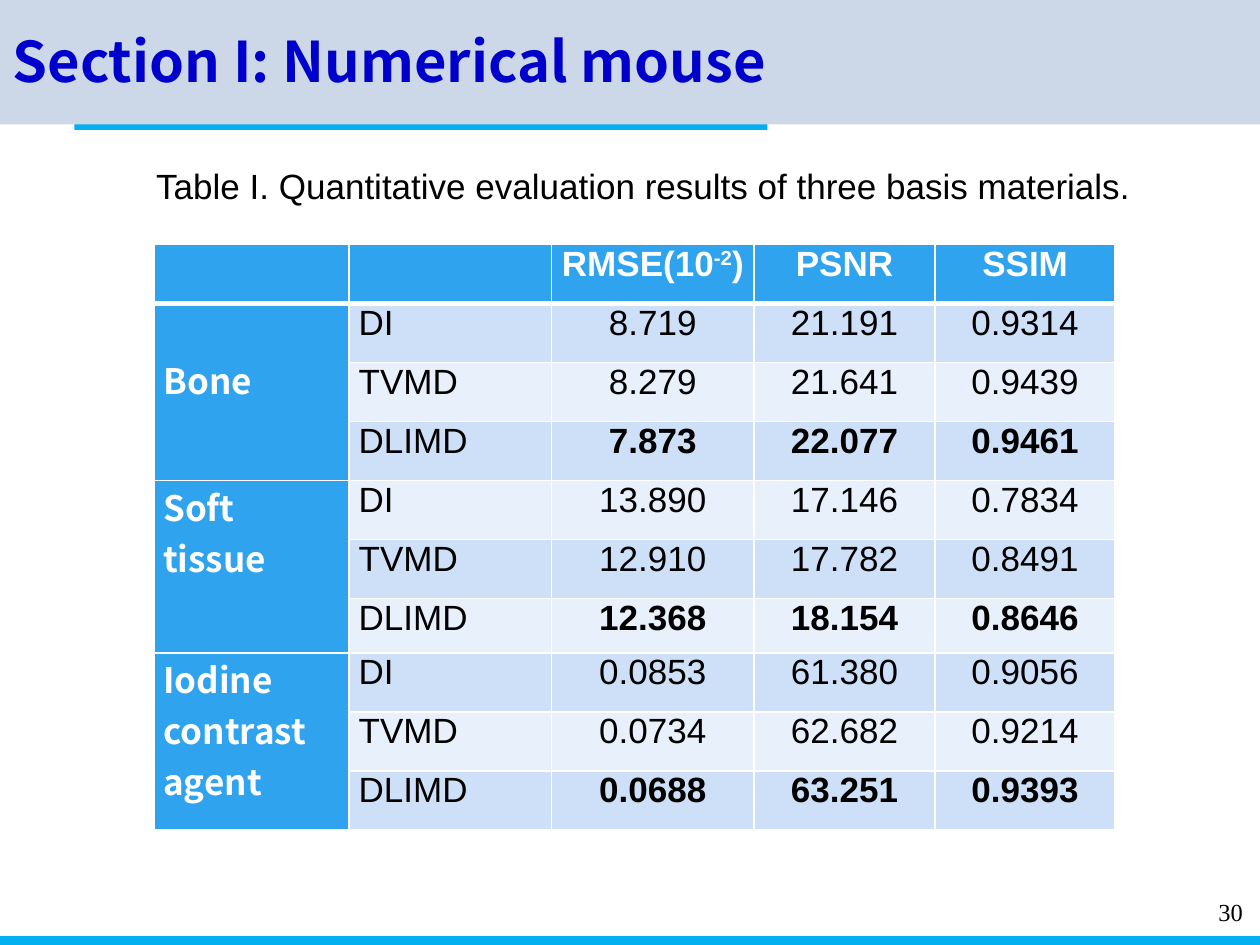
from dataclasses import dataclass
from typing import Any

from lxml.etree import SubElement
from pptx import Presentation
from pptx.dml.color import RGBColor
from pptx.enum.shapes import MSO_SHAPE as Preset
from pptx.enum.text import MSO_ANCHOR as Anchor, MSO_AUTO_SIZE as AutoSize, PP_ALIGN as Align
from pptx.oxml.ns import qn
from pptx.util import Cm, Pt

ACCENT = "00B0F0"
LABEL_FILL = "2FA3EE"
BANDS = ("CDE0F8", "E8F0FC")
WHITE = "FFFFFF"
BLACK = "000000"
HEADING_FONT = "Noto Sans CJK SC"
COLUMN_WIDTHS = (3.94, 4.08, 4.08, 3.65, 3.63)
ROW_HEIGHT = 1.19
SHORT_ROW, SHORT_ROW_HEIGHT = 6, 1.09
METHODS = ("DI", "TVMD", "DLIMD")
BEST_METHOD = "DLIMD"


@dataclass
class Box:
    left: float
    top: float
    width: float
    height: float

    def lengths(self) -> tuple:
        return Cm(self.left), Cm(self.top), Cm(self.width), Cm(self.height)


@dataclass
class Style:
    size: float
    color: str
    name: str = "Arial"
    bold: bool = False
    alignment: Any = Align.LEFT


@dataclass
class Material:
    name: str
    results: tuple
    margin_top: float = 0


BARS = (
    (Box(1.5, 2.49, 13.97, 0.13), ACCENT),
    (Box(0, 18.87, 25.4, 0.18), ACCENT),
    (Box(0, 0, 25.4, 2.51), "CCD8E7"),
)
MATERIALS = (
    Material("Bone", (("8.719", "21.191", "0.9314"),
                      ("8.279", "21.641", "0.9439"),
                      ("7.873", "22.077", "0.9461")), 1.01),
    Material("Soft tissue", (("13.890", "17.146", "0.7834"),
                             ("12.910", "17.782", "0.8491"),
                             ("12.368", "18.154", "0.8646"))),
    Material("Iodine contrast agent", (("0.0853", "61.380", "0.9056"),
                                       ("0.0734", "62.682", "0.9214"),
                                       ("0.0688", "63.251", "0.9393"))),
)
HEADER = Style(20, WHITE, bold=True, alignment=Align.CENTER)
LABEL = Style(20, WHITE, HEADING_FONT, True)
METHOD = Style(20, BLACK)
VALUE = Style(20, BLACK, alignment=Align.CENTER)
BEST_VALUE = Style(20, BLACK, bold=True, alignment=Align.CENTER)


def rgb(color: str) -> RGBColor:
    return RGBColor.from_string(color)


def apply(target: Any, values: dict) -> None:
    for name, value in values.items():
        setattr(target, name, value)


def write(frame: Any, text: str, style: Style) -> Any:
    paragraph = frame.paragraphs[0]
    paragraph.alignment = style.alignment
    add_run(paragraph, text, style)
    return paragraph


def add_run(paragraph: Any, text: str, style: Style) -> Any:
    run = paragraph.add_run()
    run.text = text
    apply(run.font, {"size": Pt(style.size), "name": style.name, "bold": style.bold})
    run.font.color.rgb = rgb(style.color)
    return run


def add_bar(slide: Any, box: Box, color: str) -> None:
    bar = slide.shapes.add_shape(Preset.RECTANGLE, *box.lengths())
    bar.shadow.inherit = False
    bar.fill.solid()
    bar.fill.fore_color.rgb = rgb(color)
    bar.line.fill.background()


def add_text(slide: Any, box: Box, text: str, style: Style) -> None:
    frame = slide.shapes.add_textbox(*box.lengths()).text_frame
    frame.word_wrap = True
    write(frame, text, style)


def set_title(slide: Any, box: Box, text: str, style: Style) -> None:
    title = slide.shapes.title
    slide.shapes._spTree.append(title._element)
    apply(title, dict(zip(("left", "top", "width", "height"), box.lengths())))
    apply(title.text_frame, {"auto_size": AutoSize.NONE, "word_wrap": True,
                             "vertical_anchor": Anchor.MIDDLE,
                             "margin_top": 0, "margin_bottom": 0})
    write(title.text_frame, text, style)


def format_cell(cell: Any, fill: str, top: float = 1, bottom: float = 1) -> None:
    apply(cell, {"margin_left": Cm(0.19), "margin_right": Cm(0.19),
                 "margin_top": 0, "margin_bottom": 0})
    properties = cell._tc.get_or_add_tcPr()
    for side, width in (("L", 1), ("R", 1), ("T", top), ("B", bottom)):
        border = SubElement(properties, qn(f"a:ln{side}"), w=str(Pt(width)))
        solid = SubElement(border, qn("a:solidFill"))
        SubElement(solid, qn("a:srgbClr"), val=WHITE)
    cell.fill.solid()
    cell.fill.fore_color.rgb = rgb(fill)


def add_results_table(slide: Any, left: float, top: float) -> None:
    row_count = 1 + len(MATERIALS) * len(METHODS)
    box = Box(left, top, sum(COLUMN_WIDTHS), ROW_HEIGHT * row_count)
    table = slide.shapes.add_table(row_count, len(COLUMN_WIDTHS), *box.lengths()).table
    for column, width in zip(table.columns, COLUMN_WIDTHS):
        column.width = Cm(width)
    for index, row in enumerate(table.rows):
        row.height = Cm(SHORT_ROW_HEIGHT if index == SHORT_ROW else ROW_HEIGHT)
        for position, cell in enumerate(row.cells):
            is_label = index == 0 or position == 0
            format_cell(cell, LABEL_FILL if is_label else BANDS[(index - 1) % 2],
                        top=3 if index == 1 else 1, bottom=3 if index == 0 else 1)

    heading = write(table.cell(0, 2).text_frame, "RMSE(10", HEADER)
    exponent = add_run(heading, "-2", HEADER)
    exponent.font._element.set("baseline", "30000")
    add_run(heading, ")", HEADER)
    for position, text in enumerate(("PSNR", "SSIM"), 3):
        write(table.cell(0, position).text_frame, text, HEADER)

    for group, material in enumerate(MATERIALS):
        first = 1 + group * len(METHODS)
        label = table.cell(first, 0)
        label.merge(table.cell(first + len(METHODS) - 1, 0))
        label.margin_top = Cm(material.margin_top)
        write(label.text_frame, material.name, LABEL)
        for index, (method, values) in enumerate(zip(METHODS, material.results), first):
            write(table.cell(index, 1).text_frame, method, METHOD)
            style = BEST_VALUE if method == BEST_METHOD else VALUE
            for position, value in enumerate(values, 2):
                write(table.cell(index, position).text_frame, value, style)


def main() -> None:
    presentation = Presentation()
    apply(presentation, {"slide_width": Cm(25.4), "slide_height": Cm(19.05)})
    slide = presentation.slides.add_slide(presentation.slide_layouts[5])
    for box, color in BARS:
        add_bar(slide, box, color)
    add_text(slide, Box(24.31, 17.96, 1.09, 0.86), "30",
             Style(14, BLACK, "Times New Roman"))
    add_results_table(slide, 3.1, 4.93)
    set_title(slide, Box(0, 0.4, 18.9, 1.63), "Section I: Numerical mouse",
              Style(32, "0000CC", HEADING_FONT, True))
    add_text(slide, Box(2.9, 3.2, 20.8, 1.12),
             "Table I. Quantitative evaluation results of three basis materials.",
             Style(20, BLACK))
    presentation.save("out.pptx")


if __name__ == "__main__":
    main()
